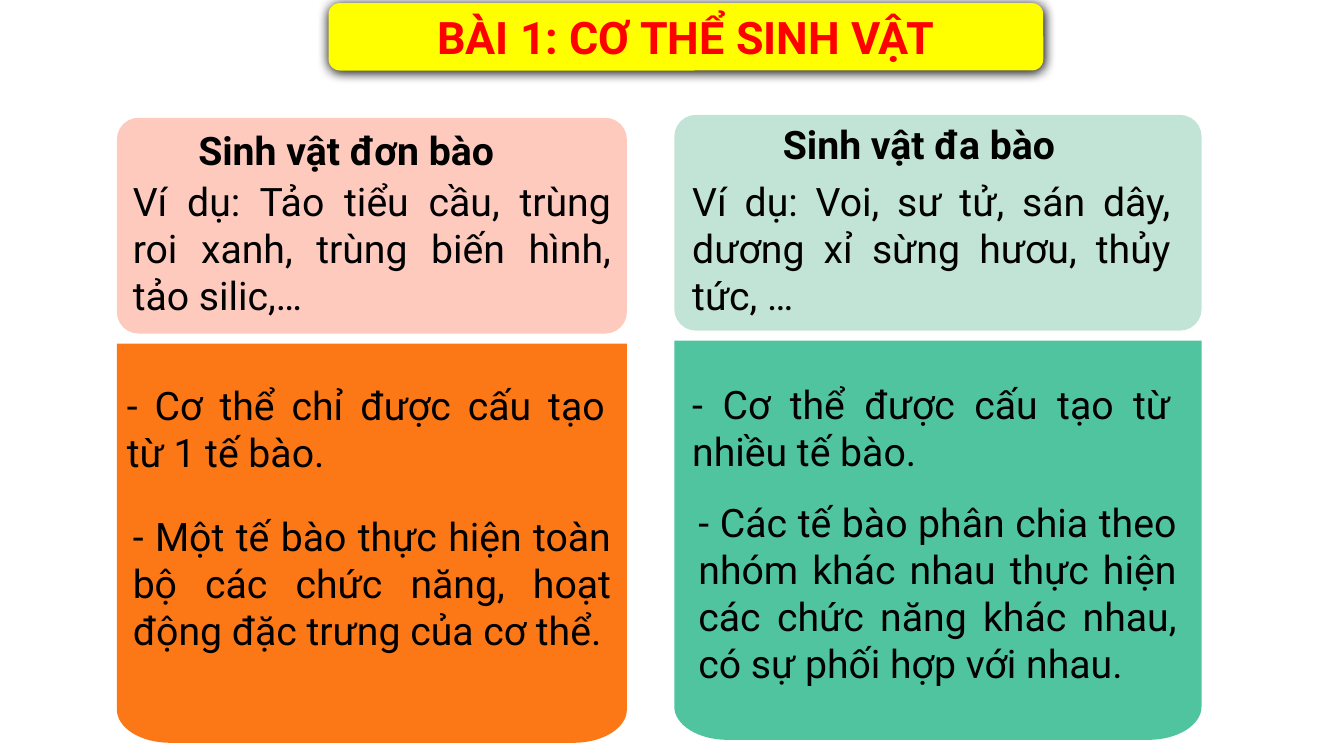
from dataclasses import dataclass
from math import cos, pi, sin

from lxml import etree
from pptx import Presentation
from pptx import util as u
from pptx.dml.color import RGBColor
from pptx.enum import shapes, text
from pptx.oxml.ns import qn

FONT = "Roboto"
CARD_H, BODY_OFFSET, BODY_H = 154.1, 161.3, 285.1
CORNER_W, CORNER_H = 38, 23.8
TEXT_W = 355.7


@dataclass
class Note:
    words: str
    left: float
    top: float
    height: float
    width: float = TEXT_W
    bold: bool = False


@dataclass
class Column:
    left: float
    top: float
    width: float
    card_color: str
    body_color: str
    notes: list[Note]


COLUMNS = [
    Column(83.5, 84.2, 364.3, "FECABD", "FC7715", [
        Note("Sinh vật đơn bào", 134.6, 86.4, 41, 269.3, True),
        Note("Ví dụ: Tảo tiểu cầu, trùng roi xanh, trùng biến hình, tảo silic,…",
             87.8, 123.1, 108.7),
        Note("- Cơ thể chỉ được cấu tạo từ 1 tế bào.", 83.5, 268.6, 74.9),
        Note("- Một tế bào thực hiện toàn bộ các chức năng, hoạt động đặc trưng của cơ thể.",
             87.8, 362.2, 108.7),
    ]),
    Column(481.7, 82.1, 376.6, "C2E4D6", "50C49F", [
        Note("Sinh vật đa bào", 552.2, 82.1, 41, 269.3, True),
        Note("Ví dụ: Voi, sư tử, sán dây, dương xỉ sừng hươu, thủy tức, …",
             487.4, 123.1, 108.7),
        Note("- Cơ thể được cấu tạo từ nhiều tế bào.", 487.4, 267.8, 74.9),
        Note("- Các tế bào phân chia theo nhóm khác nhau thực hiện các chức năng "
             "khác nhau, có sự phối hợp với nhau.", 491.8, 352.1, 177.1),
    ]),
]


def rgb(color: str) -> RGBColor:
    return RGBColor.from_string(color)


def paint(sp, color: str) -> None:
    sp.shadow.inherit = False
    sp.fill.solid()
    sp.fill.fore_color.rgb = rgb(color)
    sp.line.fill.background()


def write(sp, words: str, size: float, color: str, bold: bool, align) -> None:
    tf = sp.text_frame
    tf.word_wrap = True
    tf.text = words
    p = tf.paragraphs[0]
    p.alignment = align
    r = p.runs[0]
    r.font.name, r.font.size, r.font.bold = FONT, u.Pt(size), bold
    r.font.color.rgb = rgb(color)


def add_round_box(s, left: float, top: float, width: float, height: float, color: str):
    sp = s.shapes.add_shape(shapes.MSO_SHAPE.ROUNDED_RECTANGLE,
                            u.Pt(left), u.Pt(top), u.Pt(width), u.Pt(height))
    paint(sp, color)
    return sp


def add_shadow(sp, blur: float, distance: float) -> None:
    effects = sp.fill._xPr.find(qn("a:effectLst"))
    shadow = etree.SubElement(effects, qn("a:outerShdw"), blurRad=str(u.Pt(blur)),
                              dist=str(u.Pt(distance)), dir="5400000", rotWithShape="0")
    etree.SubElement(shadow, qn("a:srgbClr"), val="000000")


def add_body(s, col: Column) -> None:
    """Square top corners, elliptical bottom corners."""
    top = col.top + BODY_OFFSET
    right, bottom = col.left + col.width, top + BODY_H
    steps = 16
    arc = [(CORNER_W * (1 - cos(a)), CORNER_H * (1 - sin(a)))
           for a in (pi / 2 * i / steps for i in range(steps + 1))]
    points = [(right, top)]
    points += [(right - dx, bottom - dy) for dx, dy in arc]
    points += [(col.left + dx, bottom - dy) for dx, dy in reversed(arc)]
    builder = s.shapes.build_freeform(u.Pt(col.left), u.Pt(top))
    builder.add_line_segments([(u.Pt(x), u.Pt(y)) for x, y in points], close=True)
    paint(builder.convert_to_shape(), col.body_color)


def add_note(s, note: Note) -> None:
    sp = s.shapes.add_textbox(u.Pt(note.left), u.Pt(note.top),
                              u.Pt(note.width), u.Pt(note.height))
    align = text.PP_ALIGN.LEFT if note.bold else text.PP_ALIGN.JUSTIFY
    write(sp, note.words, 28, "000000", note.bold, align)


def main() -> None:
    prs = Presentation()
    prs.slide_width, prs.slide_height = u.Pt(960), u.Pt(540)
    s = prs.slides.add_slide(prs.slide_layouts[6])

    # Title
    title = add_round_box(s, 234.7, 2.2, 510.5, 48.2, "FFFF00")
    add_shadow(title, 8.5, 1)
    write(title, "BÀI 1: CƠ THỂ SINH VẬT", 32, "FF0000", True, text.PP_ALIGN.CENTER)
    title.text_frame.vertical_anchor = text.MSO_ANCHOR.MIDDLE

    # Two columns: body, card, then texts
    for col in COLUMNS:
        add_body(s, col)
        card = add_round_box(s, col.left, col.top, col.width, CARD_H, col.card_color)
        card.adjustments[0] = 0.1
        for note in col.notes:
            add_note(s, note)

    prs.save("out.pptx")


if __name__ == "__main__":
    main()
